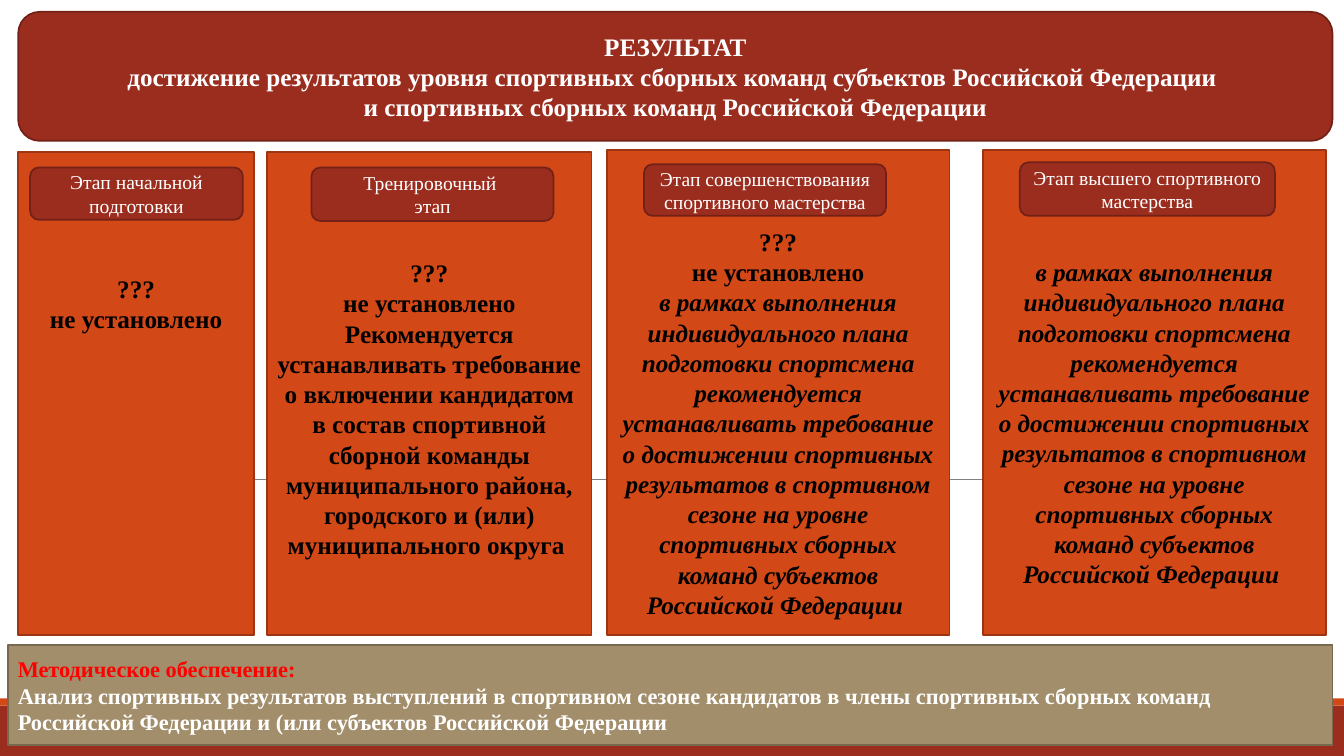
from lxml import etree
from pptx import Presentation
from pptx import util as u
from pptx.dml import color
from pptx.enum import shapes, text
from pptx.oxml import ns

RUST, DARK = "9B2D1F", "732117"
ORANGE, BROWN = "D34817", "9C3511"
SAND, OLIVE = "A28E6A", "78694E"
WHITE, BLACK, RED, GREY = "FFFFFF", "000000", "FF0000", "808080"
RECT = shapes.MSO_SHAPE.RECTANGLE
ROUND = shapes.MSO_SHAPE.ROUNDED_RECTANGLE
LEFT, MID = text.PP_ALIGN.LEFT, text.PP_ALIGN.CENTER


def rgb(code):
    return color.RGBColor.from_string(code)


class Deck:
    """Holds the style and the current slide."""

    font = "Times New Roman"
    edge = 1.25

    def __init__(self, wide, high):
        self.file = Presentation()
        self.file.slide_width, self.file.slide_height = u.Cm(wide), u.Cm(high)
        self.slide = self.file.slides.add_slide(self.file.slide_layouts[6])

    def box(self, kind, area, fill, line=None):
        shape = self.slide.shapes.add_shape(kind, *map(u.Cm, area))
        shape.shadow.inherit = False
        shape.fill.solid()
        shape.fill.fore_color.rgb = rgb(fill)
        if line:
            shape.line.color.rgb = rgb(line)
            shape.line.width = u.Pt(self.edge)
        else:
            shape.line.fill.background()
        return shape

    def rule(self, left, right, y, tint, width):
        line = self.slide.shapes.add_connector(
            shapes.MSO_CONNECTOR.STRAIGHT, u.Cm(left), u.Cm(y), u.Cm(right), u.Cm(y))
        line.line.color.rgb = rgb(tint)
        line.line.width = u.Pt(width)
        etree.SubElement(line._element.spPr, ns.qn("a:effectLst"))

    def label(self, shape, rows, align=MID, top=None, side=0.25, **base):
        """Each row is a pair: wording and its own format values."""
        frame = shape.text_frame
        frame.word_wrap = True
        frame.margin_left = frame.margin_right = u.Cm(side)
        frame.vertical_anchor = text.MSO_ANCHOR.MIDDLE
        if top is not None:
            frame.vertical_anchor = text.MSO_ANCHOR.TOP
            frame.margin_top = u.Cm(top)
        for i, (words, own) in enumerate(rows):
            para = frame.add_paragraph() if i else frame.paragraphs[0]
            para.alignment = align
            run = para.add_run()
            run.text = words
            look = {"name": self.font, "tint": WHITE, **base, **own}
            run.font.color.rgb = rgb(look.pop("tint"))
            for key, value in look.items():
                setattr(run.font, key, value)

    def save(self):
        self.file.save("out.pptx")


def main():
    deck = Deck(33.87, 19.05)
    big, note, small = u.Pt(18), u.Pt(16), u.Pt(14)

    # Footer bands and the thin rule behind the panels
    deck.box(RECT, (0, 17.78, 33.87, 1.27), RUST)
    deck.box(RECT, (0, 17.6, 33.87, 0.18), ORANGE)
    deck.rule(3.35, 30.78, 12.07, GREY, 0.5)

    # Result banner
    banner = deck.box(ROUND, (0.46, 0.3, 33.12, 3.25), RUST, DARK)
    deck.label(banner, [
        ("РЕЗУЛЬТАТ", {}),
        ("достижение результатов уровня спортивных сборных команд "
         "субъектов Российской Федерации ", {}),
        ("и спортивных сборных команд Российской Федерации", {}),
    ], size=big, bold=True)

    # Stages: panel, top and side margins, rows, caption area, caption
    unset = [("???", {}), ("не установлено", {})]
    town = ("Рекомендуется устанавливать требование о включении кандидатом "
            "в состав спортивной сборной команды муниципального района, "
            "городского и (или) муниципального округа ", {})
    plan = ("в рамках выполнения индивидуального плана подготовки спортсмена "
            "рекомендуется устанавливать требование о достижении спортивных "
            "результатов в спортивном сезоне на уровне спортивных сборных "
            "команд субъектов Российской Федерации ", {"italic": True})
    stages = [
        ((0.46, 3.84, 5.94, 12.17), 3.04, 0.1, unset,
         (0.76, 4.22, 5.36, 1.32), ["Этап начальной подготовки"]),
        ((6.73, 3.84, 8.18, 12.17), 2.65, 0.25, unset + [town],
         (7.85, 4.22, 6.1, 1.35), ["Тренировочный ", "этап"]),
        ((15.29, 3.78, 8.64, 12.22), 1.92, 0.25, unset + [plan],
         (16.23, 4.14, 6.1, 1.3), ["Этап совершенствования спортивного мастерства"]),
        ((24.77, 3.78, 8.64, 12.22), 2.68, 0.25, [plan],
         (25.7, 4.09, 6.43, 1.35), ["Этап высшего спортивного мастерства"]),
    ]
    for area, top, side, rows, spot, title in stages:
        panel = deck.box(RECT, area, ORANGE, BROWN)
        deck.label(panel, rows, top=top, side=side, size=big, bold=True, tint=BLACK)
        badge = deck.box(ROUND, spot, RUST, DARK)
        deck.label(badge, [(words, {}) for words in title], size=small)

    # Method note
    strip = deck.box(RECT, (0.2, 16.26, 33.38, 2.51), SAND, OLIVE)
    deck.label(strip, [
        ("Методическое обеспечение:", {"tint": RED}),
        ("Анализ спортивных результатов выступлений в спортивном сезоне "
         "кандидатов в члены спортивных сборных команд Российской Федерации "
         "и (или субъектов Российской Федерации", {}),
    ], align=LEFT, size=note, bold=True)

    deck.save()


if __name__ == "__main__":
    main()
